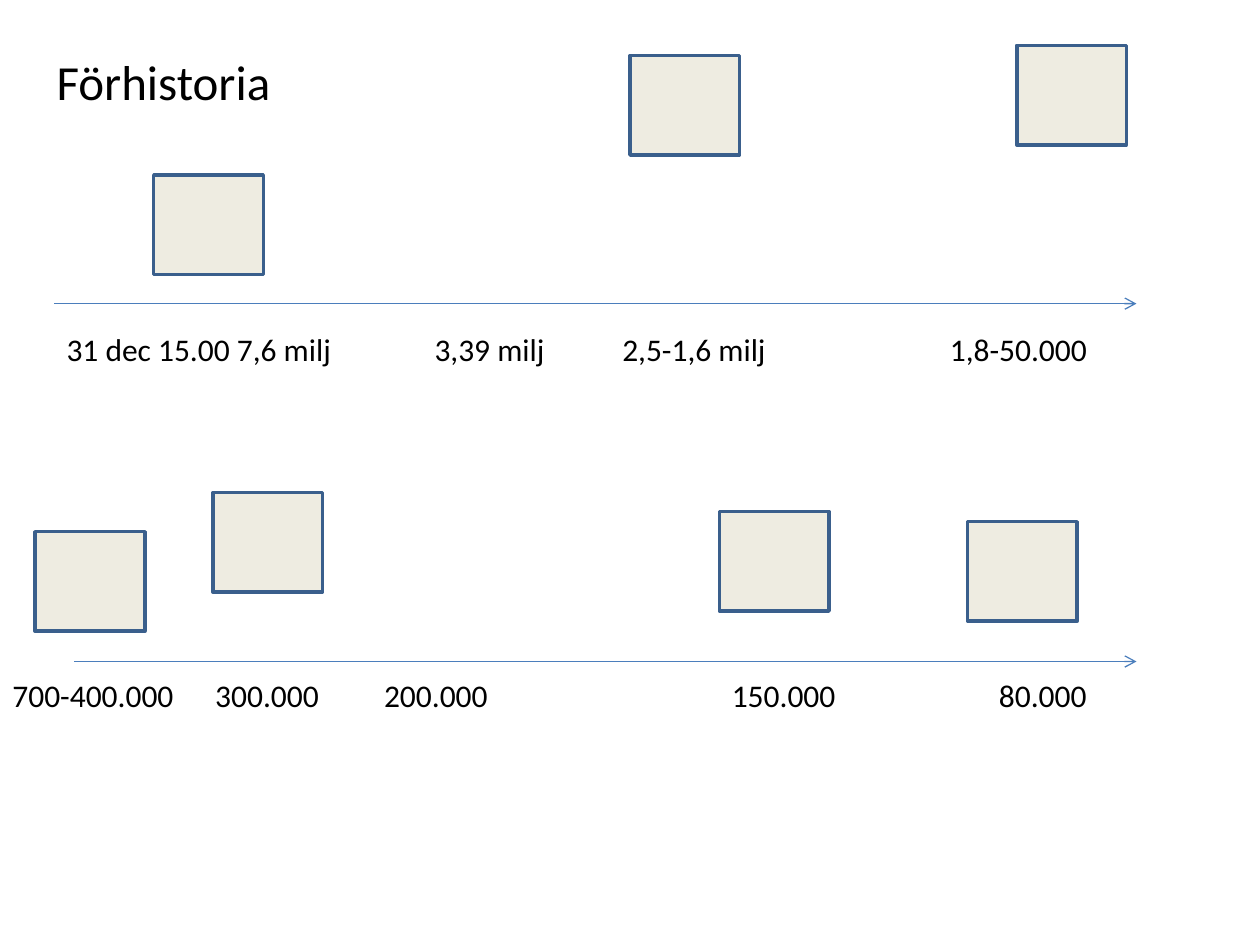
from lxml import etree
from pptx import Presentation
from pptx.dml.color import RGBColor
from pptx.enum.shapes import MSO_CONNECTOR, MSO_SHAPE
from pptx.enum.text import MSO_ANCHOR, MSO_AUTO_SIZE, PP_ALIGN
from pptx.oxml.ns import qn
from pptx.util import Inches, Pt

COLORS = {"text": "000000", "box": "EEECE1", "box_line": "3A5F8C", "axis": "4B7EBC"}
BOX_WIDTH, BOX_HEIGHT = 0.87, 0.79
LABEL_HEIGHT = 0.4
AXIS_END = 9.02

TIMELINES = [
    {
        "axis": (0.43, 2.41),
        "label_top": 2.57,
        "labels": [
            ("31 dec 15.00 7,6 milj", 0.43, 2.33),
            ("3,39 milj", 3.35, 1.08),
            ("2,5-1,6 milj", 4.84, 1.35),
            ("1,8-50.000", 7.44, 1.3),
        ],
        "boxes": [(1.22, 1.39), (5, 0.44), (8.07, 0.36)],
    },
    {
        "axis": (0.59, 5.25),
        "label_top": 5.32,
        "labels": [
            ("700-400.000", 0, 1.49),
            ("300.000", 1.61, 1.03),
            ("200.000", 2.95, 1.03),
            ("150.000", 5.71, 1.03),
            ("80.000", 7.83, 0.9),
        ],
        "boxes": [(0.28, 4.22), (1.69, 3.91), (5.71, 4.06), (7.68, 4.14)],
    },
]


def color(name):
    return RGBColor.from_string(COLORS[name])


def set_attributes(target, values):
    for name, value in values.items():
        setattr(target, name, value)


def write_text(shape, text, size):
    frame = shape.text_frame
    frame.text = text
    set_attributes(frame, {
        "word_wrap": False,
        "auto_size": MSO_AUTO_SIZE.SHAPE_TO_FIT_TEXT,
        "vertical_anchor": MSO_ANCHOR.TOP,
    })
    paragraph = frame.paragraphs[0]
    paragraph.alignment = PP_ALIGN.LEFT
    set_attributes(paragraph.font, {"name": "Calibri", "size": Pt(size)})
    paragraph.font.color.rgb = color("text")


def add_title(slide, text):
    title = slide.shapes.title
    set_attributes(title, {
        "left": Inches(0.35), "top": Inches(0.36),
        "width": Inches(1.92), "height": Inches(0.57),
    })
    write_text(title, text, 28)


def add_label(slide, text, left, top, width):
    label = slide.shapes.add_textbox(
        Inches(left), Inches(top), Inches(width), Inches(LABEL_HEIGHT))
    write_text(label, text, 18)


def add_box(slide, left, top):
    box = slide.shapes.add_shape(
        MSO_SHAPE.RECTANGLE, Inches(left), Inches(top),
        Inches(BOX_WIDTH), Inches(BOX_HEIGHT))
    box.shadow.inherit = False
    box.fill.solid()
    box.fill.fore_color.rgb = color("box")
    box.line.color.rgb = color("box_line")
    box.line.width = Pt(2)


def add_axis(slide, left, top):
    axis = slide.shapes.add_connector(
        MSO_CONNECTOR.STRAIGHT, Inches(left), Inches(top), Inches(AXIS_END), Inches(top))
    axis.line.color.rgb = color("axis")
    axis.line.width = Pt(0.75)
    properties = axis._element.spPr
    etree.SubElement(properties.find(qn("a:ln")), qn("a:tailEnd"), type="arrow")
    etree.SubElement(properties, qn("a:effectLst"))


def add_timeline(slide, timeline):
    for left, top in timeline["boxes"]:
        add_box(slide, left, top)
    add_axis(slide, *timeline["axis"])
    for text, left, width in timeline["labels"]:
        add_label(slide, text, left, timeline["label_top"], width)


def main():
    presentation = Presentation()
    presentation.slide_width = Inches(10)
    presentation.slide_height = Inches(7.5)
    slide = presentation.slides.add_slide(presentation.slide_layouts.get_by_name("Title Only"))
    add_title(slide, "Förhistoria")
    for timeline in TIMELINES:
        add_timeline(slide, timeline)
    presentation.save("out.pptx")


if __name__ == "__main__":
    main()
